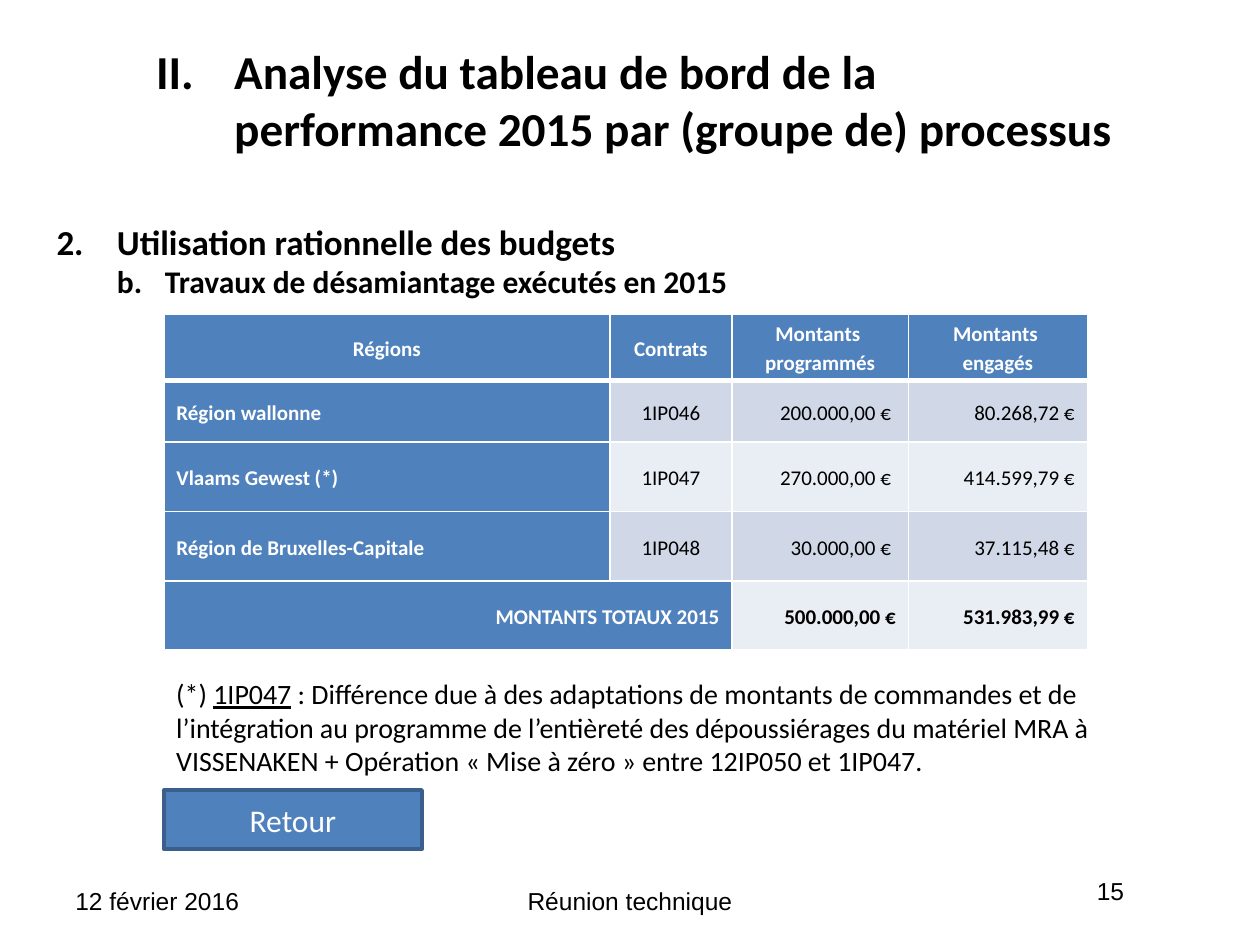
from pptx import Presentation
from pptx.dml.color import RGBColor
from pptx.enum.shapes import MSO_SHAPE
from pptx.enum.text import MSO_ANCHOR, PP_ALIGN
from pptx.oxml.ns import qn
from pptx.util import Inches, Pt
from lxml import etree

LEFT, CENTER, RIGHT = PP_ALIGN.LEFT, PP_ALIGN.CENTER, PP_ALIGN.RIGHT
TOP, MIDDLE = MSO_ANCHOR.TOP, MSO_ANCHOR.MIDDLE
RECTANGLE = MSO_SHAPE.RECTANGLE

COLORS = {"black": "000000", "white": "FFFFFF", "blue": "4F81BD",
          "outline": "3A5F8C", "band": "D0D8E8", "pale": "E9EDF4"}

# Content
TITLE = "Analyse du tableau de bord de la performance 2015 par (groupe de) processus"
SECTION = "Utilisation rationnelle des budgets"
SUBSECTION = "Travaux de désamiantage exécutés en 2015"
BUDGET_ROWS = [
    ("Régions", "Contrats", "Montants \vprogrammés", "Montants \vengagés"),
    ("Région wallonne", "1IP046", "200.000,00 € ", "80.268,72 €"),
    ("Vlaams Gewest (*)", "1IP047", "270.000,00 € ", "414.599,79 €"),
    ("Région de Bruxelles-Capitale", "1IP048", "30.000,00 € ", "37.115,48 €"),
    ("MONTANTS TOTAUX 2015", "", "500.000,00 €", "531.983,99 €"),
]
COLUMN_WIDTHS = (3.54, 0.97, 1.4, 1.42)
ROW_HEIGHTS = (0.53, 0.49, 0.55, 0.55, 0.55)
COLUMN_ALIGNS = (LEFT, CENTER, RIGHT, RIGHT)
NOTE = [
    ("(*) ", False),
    ("1IP047", True),
    (" : Différence due à des adaptations de montants de commandes et de "
     "l’intégration au programme de l’entièreté des dépoussiérages du matériel MRA à "
     "VISSENAKEN + Opération « Mise à zéro » entre 12IP050 et 1IP047.", False),
]
FOOTERS = [  # text, box, alignment
    ("12 février 2016", (0.5, 6.98, 2.33, 0.37), LEFT),
    ("Réunion technique", (3.11, 6.98, 3.78, 0.37), CENTER),
    ("15", (7.17, 6.9, 1.85, 0.52), RIGHT),
]


def rgb(name):
    return RGBColor.from_string(COLORS[name])


def style(paragraph, size, color="black", bold=False, align=LEFT, font="Calibri"):
    paragraph.alignment = align
    paragraph.font.name = font
    paragraph.font.size = Pt(size)
    paragraph.font.bold = bold
    paragraph.font.color.rgb = rgb(color)


def number(paragraph, scheme, margin, hanging):
    """Number the paragraph from 2 with a hanging indent."""
    properties = paragraph._p.get_or_add_pPr()
    properties.set("marL", str(Inches(margin)))
    properties.set("indent", str(-Inches(hanging)))
    etree.SubElement(properties, qn("a:buFont"), typeface="+mj-lt")
    etree.SubElement(properties, qn("a:buAutoNum"), type=scheme, startAt="2")


def add_text(box, anchor=TOP):
    frame = slide.shapes.add_textbox(*map(Inches, box)).text_frame
    frame.word_wrap = True
    frame.vertical_anchor = anchor
    return frame


def set_borders(cell, top, bottom):
    properties = cell._tc.get_or_add_tcPr()
    for side, width in (("L", 1), ("R", 1), ("T", top), ("B", bottom)):
        line = etree.SubElement(properties, qn(f"a:ln{side}"), w=str(Pt(width)))
        fill = etree.SubElement(line, qn("a:solidFill"))
        etree.SubElement(fill, qn("a:srgbClr"), val=COLORS["white"])


prs = Presentation()
prs.slide_width, prs.slide_height = Inches(10), Inches(7.5)
slide = prs.slides.add_slide(prs.slide_layouts[6])

# Title
title = add_text((1.14, 0.36, 7.88, 0.85), MIDDLE).paragraphs[0]
title.text = TITLE
number(title, "romanUcPeriod", 0.62, 0.62)
style(title, 27, bold=True)

# Section headings
headings = add_text((0.35, 1.7, 9.45, 0.74))
section, subsection = headings.paragraphs[0], headings.add_paragraph()
section.text, subsection.text = SECTION, SUBSECTION
number(section, "arabicPeriod", 0.48, 0.48)
number(subsection, "alphaLcPeriod", 0.86, 0.38)
subsection.level = 1
style(section, 20, bold=True)
style(subsection, 18, bold=True)

# Budget table
budget = slide.shapes.add_table(
    len(BUDGET_ROWS), len(COLUMN_WIDTHS), Inches(1.3), Inches(2.49),
    Inches(sum(COLUMN_WIDTHS)), Inches(sum(ROW_HEIGHTS))).table
for column, width in zip(budget.columns, COLUMN_WIDTHS):
    column.width = Inches(width)
for row, height in zip(budget.rows, ROW_HEIGHTS):
    row.height = Inches(height)

total_row = len(BUDGET_ROWS) - 1
for r, values in enumerate(BUDGET_ROWS):
    for c, value in enumerate(values):
        cell = budget.cell(r, c)
        heading = r == 0 or c == 0
        on_blue = heading or (r == total_row and c == 1)
        set_borders(cell, top=3 if r == 1 else 1, bottom=3 if r == 0 else 1)
        cell.fill.solid()
        cell.fill.fore_color.rgb = rgb("blue" if on_blue else "band" if r % 2 else "pale")
        cell.vertical_anchor = MIDDLE
        cell.margin_left = cell.margin_right = Inches(0.1)
        cell.margin_top = cell.margin_bottom = 0
        align = CENTER if r == 0 else RIGHT if r == total_row else COLUMN_ALIGNS[c]
        paragraph = cell.text_frame.paragraphs[0]
        paragraph.text = value
        paragraph.line_spacing = 1.15
        style(paragraph, 12, "white" if on_blue else "black",
              heading or r == total_row, align)
budget.cell(total_row, 0).merge(budget.cell(total_row, 1))

# Footnote to the table
note = add_text((1.3, 5.32, 7.72, 0.91)).paragraphs[0]
for text, underlined in NOTE:
    run = note.add_run()
    run.text = text
    run.font.underline = underlined
style(note, 16)

# Return button
button = slide.shapes.add_shape(RECTANGLE, *map(Inches, (1.3, 6.27, 2.05, 0.47)))
button.shadow.inherit = False
button.fill.solid()
button.fill.fore_color.rgb = rgb("blue")
button.line.color.rgb = rgb("outline")
button.line.width = Pt(2)
button.text_frame.vertical_anchor = MIDDLE
button.text_frame.text = "Retour"
style(button.text_frame.paragraphs[0], 18, "white", align=CENTER)

# Footer
for text, box, align in FOOTERS:
    footer = add_text(box).paragraphs[0]
    footer.text = text
    style(footer, 14, align=align, font="Arial")

prs.save("out.pptx")
